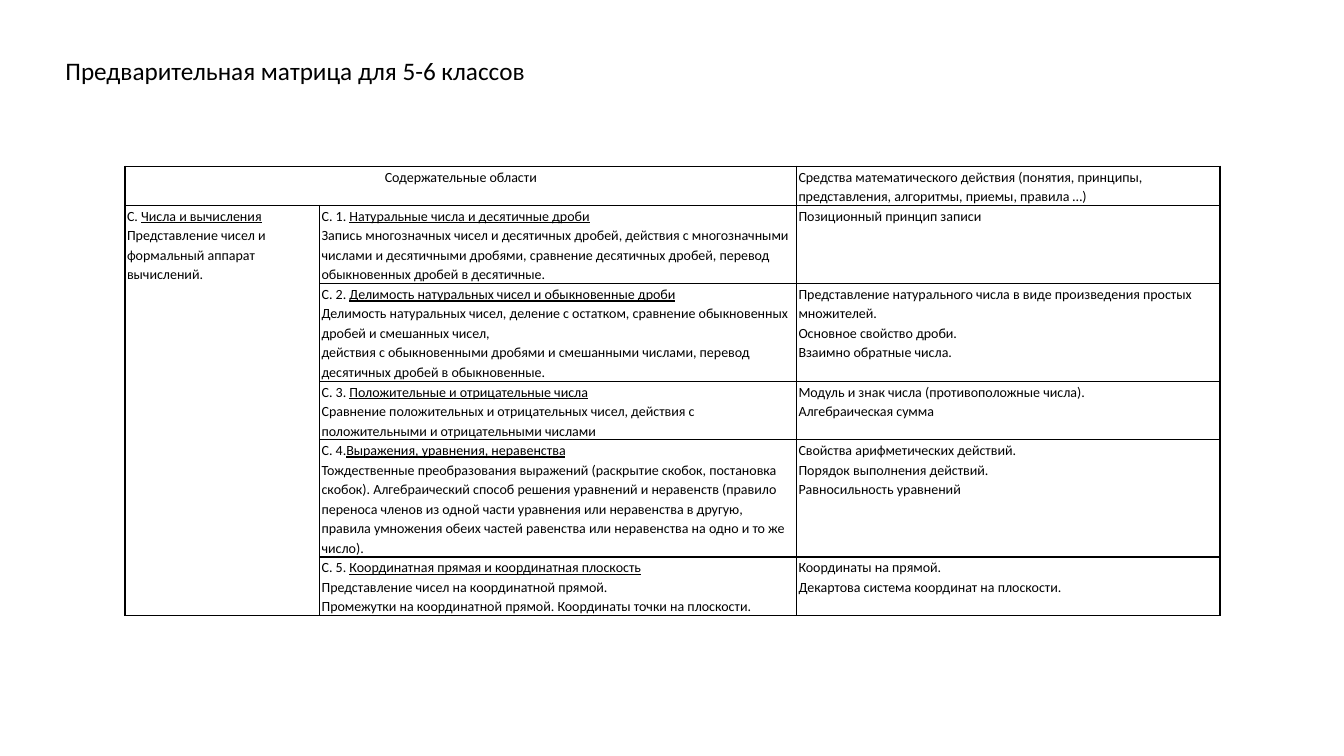
from lxml import etree
from pptx import Presentation
from pptx.dml.color import RGBColor
from pptx.enum.text import MSO_AUTO_SIZE, PP_ALIGN
from pptx.oxml.ns import qn
from pptx.util import Emu, Pt

CENTER = PP_ALIGN.CENTER
GROW = MSO_AUTO_SIZE.SHAPE_TO_FIT_TEXT
BLACK = RGBColor(0x00, 0x00, 0x00)
FONT = "Calibri"
EMU_PER_PX = 9144  # 100 px to the inch

TITLE = "Предварительная матрица для 5-6 классов"
COLUMN_WIDTHS = [193, 473, 420]
ROW_HEIGHTS = [38, 76, 96, 57, 95, 58]
AREAS = ["Содержательные области"]
MEANS = ["Средства математического действия (понятия, принципы, "
         "представления, алгоритмы, приемы, правила …)"]
# A tuple is a heading: its code, then its underlined name.
SECTION = [("С. ", "Числа и вычисления"),
           "Представление чисел и формальный аппарат вычислений."]
TOPICS = [
    ([("С. 1. ", "Натуральные числа и десятичные дроби"),
      "Запись многозначных чисел и десятичных дробей, действия с многозначными "
      "числами и десятичными дробями, сравнение десятичных дробей, перевод "
      "обыкновенных дробей в десятичные."],
     ["Позиционный принцип записи"]),
    ([("С. 2. ", "Делимость натуральных чисел и обыкновенные дроби"),
      "Делимость натуральных чисел, деление с остатком, сравнение обыкновенных "
      "дробей и смешанных чисел,",
      "действия с обыкновенными дробями и смешанными числами, перевод "
      "десятичных дробей в обыкновенные."],
     ["Представление натурального числа в виде произведения простых множителей.",
      "Основное свойство дроби.",
      "Взаимно обратные числа."]),
    ([("С. 3. ", "Положительные и отрицательные числа"),
      "Сравнение положительных и отрицательных чисел, действия с "
      "положительными и отрицательными числами"],
     ["Модуль и знак числа (противоположные числа).",
      "Алгебраическая сумма"]),
    ([("С. 4.", "Выражения, уравнения, неравенства"),
      "Тождественные преобразования выражений (раскрытие скобок, постановка "
      "скобок). Алгебраический способ решения уравнений и неравенств (правило "
      "переноса членов из одной части уравнения или неравенства в другую, "
      "правила умножения обеих частей равенства или неравенства на одно и то "
      "же число)."],
     ["Свойства арифметических действий.",
      "Порядок выполнения действий.",
      "Равносильность уравнений"]),
    ([("С. 5. ", "Координатная прямая и координатная плоскость"),
      "Представление чисел на координатной прямой.",
      "Промежутки на координатной прямой. Координаты точки на плоскости."],
     ["Координаты на прямой.",
      "Декартова система координат на плоскости."]),
]


def px(length):
    return Emu(length * EMU_PER_PX)


class SlideBuilder:
    def __init__(self, slide, font_name, color, line_spacing):
        self.slide = slide
        self.font_name = font_name
        self.color = color
        self.line_spacing = line_spacing

    def style(self, paragraph, size):
        paragraph.line_spacing = self.line_spacing
        font = paragraph.font
        font.name, font.size = self.font_name, Pt(size)
        font.color.rgb = self.color

    def title(self, text, left, top, width, height):
        box = self.slide.shapes.add_textbox(px(left), px(top), px(width), px(height))
        frame = box.text_frame
        frame.word_wrap = False
        frame.auto_size = GROW
        paragraph = frame.paragraphs[0]
        paragraph.text = text
        paragraph.space_after = Pt(10)
        self.style(paragraph, 18)

    def table(self, left, top, column_widths, row_heights):
        """Add an unfilled table with thin borders and return it."""
        frame = self.slide.shapes.add_table(
            len(row_heights), len(column_widths), px(left), px(top),
            px(sum(column_widths)), px(sum(row_heights)))
        table = frame.table
        table.first_row = table.horz_banding = False
        for column, width in zip(table.columns, column_widths):
            column.width = px(width)
        for row, height in zip(table.rows, row_heights):
            row.height = px(height)
        for cell in table.iter_cells():
            cell.margin_left = cell.margin_right = px(2)
            cell.margin_top = cell.margin_bottom = 0
            self.borders(cell)
            cell.fill.background()
        return table

    def borders(self, cell):
        properties = cell._tc.get_or_add_tcPr()
        for side in ("a:lnL", "a:lnR", "a:lnT", "a:lnB"):
            line = etree.SubElement(properties, qn(side), w=str(Pt(1)))
            fill = etree.SubElement(line, qn("a:solidFill"))
            etree.SubElement(fill, qn("a:srgbClr"), val=str(self.color))

    def cell_text(self, cell, items, alignment=None):
        frame = cell.text_frame
        for index, item in enumerate(items):
            paragraph = frame.add_paragraph() if index else frame.paragraphs[0]
            if isinstance(item, tuple):
                code, name = item
                paragraph.add_run().text = code
                heading = paragraph.add_run()
                heading.text = name
                heading.font.underline = True
            else:
                paragraph.text = item
            paragraph.alignment = alignment
            self.style(paragraph, 10)


def main():
    presentation = Presentation()
    presentation.slide_width, presentation.slide_height = px(1333), px(750)
    slide = presentation.slides.add_slide(presentation.slide_layouts[6])
    builder = SlideBuilder(slide, FONT, BLACK, 1.15)

    matrix = builder.table(124, 165, COLUMN_WIDTHS, ROW_HEIGHTS)
    matrix.cell(0, 0).merge(matrix.cell(0, 1))
    matrix.cell(1, 0).merge(matrix.cell(len(TOPICS), 0))
    builder.cell_text(matrix.cell(0, 0), AREAS, CENTER)
    builder.cell_text(matrix.cell(0, 2), MEANS)
    builder.cell_text(matrix.cell(1, 0), SECTION)
    for row, (topic, means) in enumerate(TOPICS, start=1):
        builder.cell_text(matrix.cell(row, 1), topic)
        builder.cell_text(matrix.cell(row, 2), means)

    builder.title(TITLE, 55, 46, 481, 43)
    presentation.save("out.pptx")


if __name__ == "__main__":
    main()
